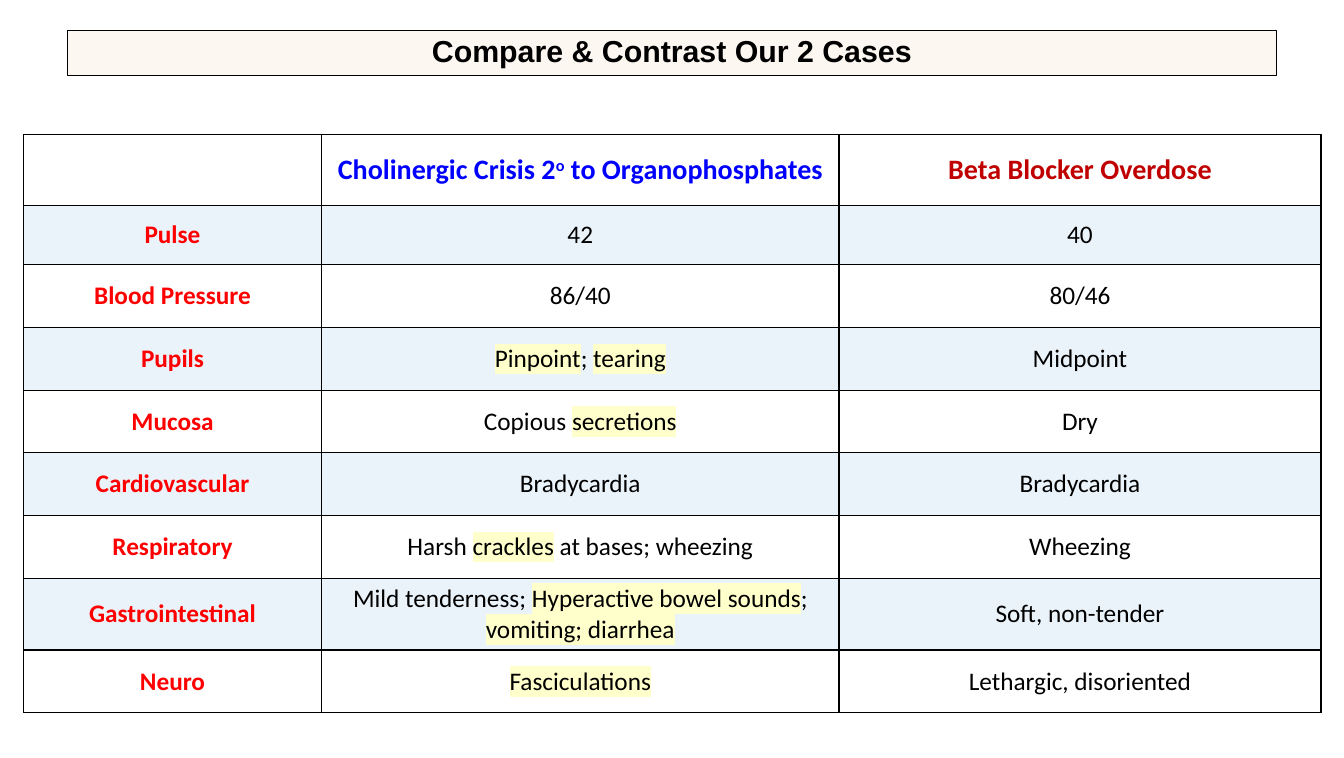
from dataclasses import dataclass

from lxml.etree import SubElement
from pptx import Presentation
from pptx.dml.color import RGBColor as RGB
from pptx.enum.shapes import MSO_SHAPE as SHAPE
from pptx.enum.text import MSO_ANCHOR as ANCHOR, PP_ALIGN as ALIGN
from pptx.oxml.ns import qn
from pptx.util import Inches, Pt

COLORS = {
    "black": "000000", "blue": "0000FF", "crimson": "C00000", "red": "FF0000",
    "cream": "FDF0E7", "band": "9DC3E6", "mark": "FFFFCC",
}
SLIDE_W, SLIDE_H = Inches(13.3), Inches(7.5)


@dataclass(frozen=True)
class Box:
    """Position and size in percent of the slide."""
    x: float
    y: float
    w: float
    h: float

    def emu(self) -> tuple[int, int, int, int]:
        return across(self.x), down(self.y), across(self.w), down(self.h)


@dataclass(frozen=True)
class Style:
    size: float
    color: str
    bold: bool = True
    font: str = "Calibri"


@dataclass(frozen=True)
class Finding:
    """One table row; bars enclose the highlighted words."""
    system: str
    cholinergic: str
    beta_blocker: str


TITLE = Style(21.6, "black", font="Arial")
LABEL, VALUE = Style(18, "red"), Style(18, "black", bold=False)
CRISIS, OVERDOSE = Style(20, "blue"), Style(20, "crimson")

TITLE_BOX = Box(5, 4, 90, 6)
COLUMNS = (22.18, 38.5, 35.86)
HEADER_ROW, FIRST_ROW, OTHER_ROW = 9.33, 7.87, 8.27

FINDINGS = (
    Finding("Pulse", "42", "40"),
    Finding("Blood Pressure", "86/40", "80/46"),
    Finding("Pupils", "|Pinpoint|; |tearing|", "Midpoint"),
    Finding("Mucosa", "Copious |secretions|", "Dry"),
    Finding("Cardiovascular", "Bradycardia", "Bradycardia"),
    Finding("Respiratory", "Harsh |crackles| at bases; wheezing", "Wheezing"),
    Finding("Gastrointestinal",
            "Mild tenderness; |Hyperactive bowel sounds|; |vomiting; diarrhea|",
            "Soft, non-tender"),
    Finding("Neuro", "|Fasciculations|", "Lethargic, disoriented"),
)


def across(percent: float) -> int:
    return round(SLIDE_W * percent / 100)


def down(percent: float) -> int:
    return round(SLIDE_H * percent / 100)


def tint(fill, props, color: str, percent: int) -> None:
    """Fill with a colour of the given opacity."""
    fill.solid()
    fill.fore_color.rgb = RGB.from_string(COLORS[color])
    clr = props.find(qn("a:solidFill"))[0]
    SubElement(clr, qn("a:alpha"), val=str(percent * 1000))


def highlight(r) -> None:
    mark = SubElement(r._r.get_or_add_rPr(), qn("a:highlight"))
    SubElement(mark, qn("a:srgbClr"), val=COLORS["mark"])


def superscript(r) -> None:
    r._r.get_or_add_rPr().set("baseline", "30000")


def write(tf, text: str, style: Style, accent=highlight):
    """Write one centred paragraph, with the accent on the parts in bars."""
    p = tf.paragraphs[0]
    p.alignment = ALIGN.CENTER
    p.font.size, p.font.bold, p.font.name = Pt(style.size), style.bold, style.font
    p.font.color.rgb = RGB.from_string(COLORS[style.color])
    for i, part in enumerate(text.split("|")):
        if part:
            r = p.add_run()
            r.text = part
            if i % 2:
                accent(r)
    return p


def add_borders(cell) -> None:
    for side in ("lnL", "lnR", "lnT", "lnB"):
        ln = SubElement(cell._tc.get_or_add_tcPr(), qn(f"a:{side}"), w=str(Pt(1)))
        SubElement(SubElement(ln, qn("a:solidFill")), qn("a:srgbClr"),
                   val=COLORS["black"])


def add_title(s) -> None:
    sp = s.shapes.add_shape(SHAPE.RECTANGLE, *TITLE_BOX.emu())
    sp.shadow.inherit = False
    tint(sp.fill, sp._element.spPr, "cream", 50)
    sp.line.color.rgb = RGB.from_string(COLORS["black"])
    sp.line.width = Pt(0.75)
    tf = sp.text_frame
    tf.word_wrap = True
    tf.vertical_anchor = ANCHOR.MIDDLE
    write(tf, "Compare & Contrast Our 2 Cases", TITLE).line_spacing = 0.9


def add_comparison(s) -> None:
    heights = [HEADER_ROW, FIRST_ROW] + [OTHER_ROW] * (len(FINDINGS) - 1)
    box = Box(1.75, 17.75, sum(COLUMNS), sum(heights))
    table = s.shapes.add_table(len(heights), len(COLUMNS), *box.emu()).table
    table.first_row = table.horz_banding = False
    for column, width in zip(table.columns, COLUMNS):
        column.width = across(width)

    # Borders and banding
    for i, (row, height) in enumerate(zip(table.rows, heights)):
        row.height = down(height)
        for cell in row.cells:
            cell.vertical_anchor = ANCHOR.MIDDLE
            add_borders(cell)
            if i % 2:
                tint(cell.fill, cell._tc.tcPr, "band", 20)
            else:
                cell.fill.background()

    # Header
    write(table.cell(0, 1).text_frame, "Cholinergic Crisis 2|o| to Organophosphates",
          CRISIS, superscript)
    write(table.cell(0, 2).text_frame, "Beta Blocker Overdose", OVERDOSE)

    # Findings
    for i, f in enumerate(FINDINGS, 1):
        texts = (f.system, f.cholinergic, f.beta_blocker)
        for j, (text, style) in enumerate(zip(texts, (LABEL, VALUE, VALUE))):
            write(table.cell(i, j).text_frame, text, style)


def main() -> None:
    prs = Presentation()
    prs.slide_width, prs.slide_height = SLIDE_W, SLIDE_H
    s = prs.slides.add_slide(prs.slide_layouts[6])
    add_title(s)
    add_comparison(s)
    prs.save("out.pptx")


if __name__ == "__main__":
    main()
